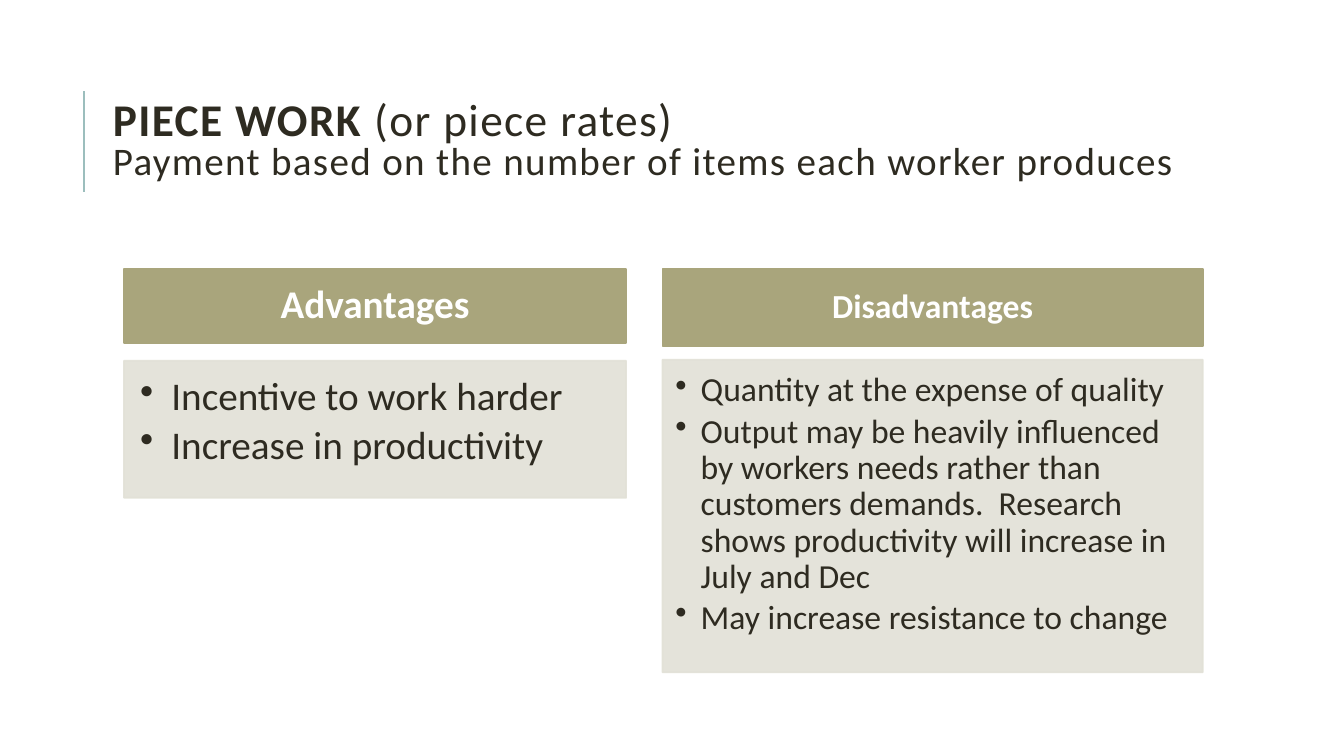
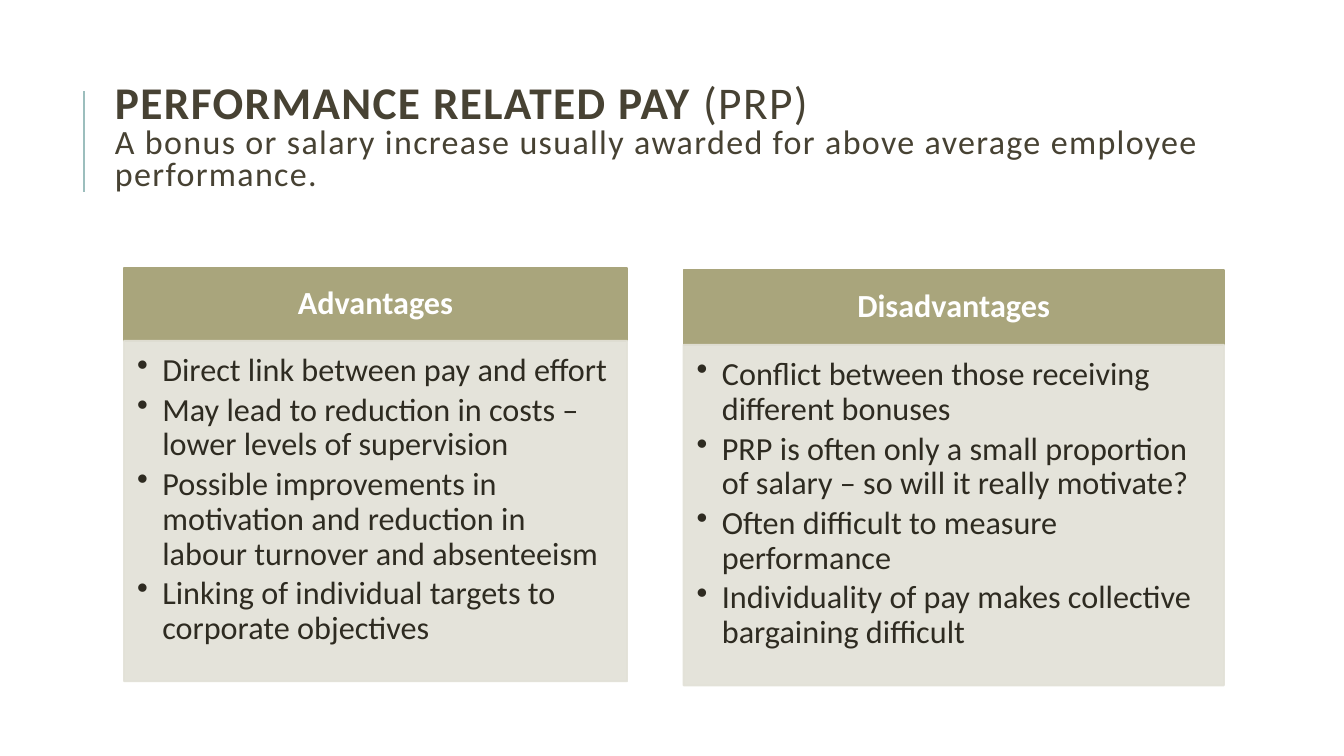
from lxml.etree import SubElement
from pptx import Presentation
from pptx.dml.color import RGBColor
from pptx.enum.shapes import MSO_CONNECTOR, MSO_SHAPE
from pptx.enum.text import MSO_ANCHOR, MSO_AUTO_SIZE, PP_ALIGN
from pptx.oxml.ns import qn
from pptx.util import Pt

PX = 9144
FONT = "Calibri"
WHITE = RGBColor(0xFF, 0xFF, 0xFF)
INK = RGBColor(0x2E, 0x2B, 0x21)
BROWN = RGBColor(0x47, 0x42, 0x33)
OLIVE = RGBColor(0xA9, 0xA5, 0x7C)
SAND = RGBColor(0xE2, 0xE1, 0xD7)
TEAL = RGBColor(0x9C, 0xBE, 0xBD)

SLIDES = [
    {
        "title": [
            [("PIECE WORK ", {"bold": True}), ("(or piece rates)", {})],
            [("Payment based on the number of items each worker produces",
              {"size": 27.9})],
        ],
        "spot": (102, 81, 1125, 120),
        "color": INK,
        "cards": [
            {"box": (123, 267, 498, 227), "head": 73, "gap": 18, "size": 28,
             "name": "Advantages",
             "items": ["Incentive to work harder",
                       "Increase in productivity"]},
            {"box": (657, 267, 536, 400), "head": 76, "gap": 14, "size": 24,
             "name": "Disadvantages",
             "items": ["Quantity at the expense of quality",
                       "Output may be heavily influenced by workers needs "
                       "rather than customers demands.  Research shows "
                       "productivity will increase in July and Dec",
                       "May increase resistance to change"]},
        ],
    },
    {
        "title": [
            [("PERFORMANCE RELATED PAY", {"bold": True}), (" (PRP)", {})],
            [("A bonus or salary increase usually awarded for above average "
              "employee performance.", {"size": 24.3})],
        ],
        "spot": (104, 78, 1125, 120),
        "color": BROWN,
        "cards": [
            {"box": (123, 266, 499, 410), "head": 72, "gap": 0, "size": 23,
             "name": "Advantages",
             "items": ["Direct link between pay and effort",
                       "May lead to reduction in costs – lower levels of "
                       "supervision",
                       "Possible improvements in motivation and reduction in "
                       "labour turnover and absenteeism",
                       "Linking of individual targets to corporate "
                       "objectives"]},
            {"box": (678, 268, 536, 412), "head": 74, "gap": 0, "size": 23,
             "name": "Disadvantages",
             "items": ["Conflict between those receiving different bonuses",
                       "PRP is often only a small proportion of salary – so "
                       "will it really motivate?",
                       "Often difficult to measure performance",
                       "Individuality of pay makes collective bargaining "
                       "difficult"]},
        ],
    },
]


def px(n):
    """Turn px into EMU."""
    return round(n) * PX


def text(frame, rows, size, color, bold=False, align=PP_ALIGN.LEFT,
         anchor=MSO_ANCHOR.MIDDLE, pad=(10, 0, 10, 0), lead=0.9, after=0,
         dent=0, track=0):
    """Fill a text frame with rows of runs in the given format."""
    frame.word_wrap = True
    frame.auto_size = MSO_AUTO_SIZE.NONE
    frame.vertical_anchor = anchor
    (frame.margin_left, frame.margin_top,
     frame.margin_right, frame.margin_bottom) = map(px, pad)
    for i, row in enumerate(rows):
        para = frame.add_paragraph() if i else frame.paragraphs[0]
        if dent:
            props = para._p.get_or_add_pPr()
            props.set("marL", str(px(dent)))
            props.set("indent", str(-px(dent)))
            SubElement(props, qn("a:buChar")).set("char", "•")
        para.alignment = align
        para.line_spacing = lead
        para.space_after = Pt(after)
        for words, style in row:
            run = para.add_run()
            run.text = words
            font = run.font
            font.name = FONT
            font.size = Pt(style.get("size", size))
            font.bold = style.get("bold", bold)
            font.color.rgb = color
            if track:
                run._r.get_or_add_rPr().set("spc", str(track))


def fade(fill, alpha):
    """Give a solid fill an opacity in percent."""
    for tone in fill.iter(qn("a:srgbClr")):
        SubElement(tone, qn("a:alpha")).set("val", str(alpha * 1000))


def block(slide, box, color, alpha=100):
    """Add a flat rectangle and return its text frame."""
    shape = slide.shapes.add_shape(MSO_SHAPE.RECTANGLE, *map(px, box))
    shape.shadow.inherit = False
    shape.fill.solid()
    shape.fill.fore_color.rgb = color
    shape.line.color.rgb = color
    shape.line.width = Pt(1.25)
    if alpha < 100:
        fade(shape._element.spPr, alpha)
    return shape.text_frame


def card(slide, box, head, gap, size, name, items):
    """Draw a header band with a bulleted panel under it."""
    left, top, wide, high = box
    side = size * 0.78
    band = block(slide, (left, top, wide, head), OLIVE)
    text(band, [[(name, {})]], size, WHITE, bold=True, align=PP_ALIGN.CENTER,
         pad=(side, size * 0.44) * 2)
    drop = head + gap
    panel = block(slide, (left, top + drop, wide, high - drop), SAND, 90)
    text(panel, [[(item, {})] for item in items], size, INK,
         anchor=MSO_ANCHOR.TOP, after=size * 0.15,
         pad=(size * 0.56, size * 0.56, side, size * 0.865),
         dent=31 if size > 24 else 25)


def header(slide, rows, spot, color):
    """Place the title and the thin rule at its left."""
    rule = slide.shapes.add_connector(
        MSO_CONNECTOR.STRAIGHT, *map(px, (83, 190, 83, 90)))
    rule.line.color.rgb = TEAL
    rule.line.width = Pt(1.5)
    SubElement(rule._element.spPr, qn("a:effectLst"))
    title = slide.shapes.title
    title.left, title.top, title.width, title.height = map(px, spot)
    text(title.text_frame, rows, 32.4, color, lead=0.8, track=100)


def main():
    """Build and save the deck."""
    deck = Presentation()
    deck.slide_width, deck.slide_height = px(1333), px(750)
    for page in SLIDES:
        slide = deck.slides.add_slide(deck.slide_layouts[5])
        header(slide, page["title"], page["spot"], page["color"])
        for part in page["cards"]:
            card(slide, **part)
    deck.save("out.pptx")


if __name__ == "__main__":
    main()
